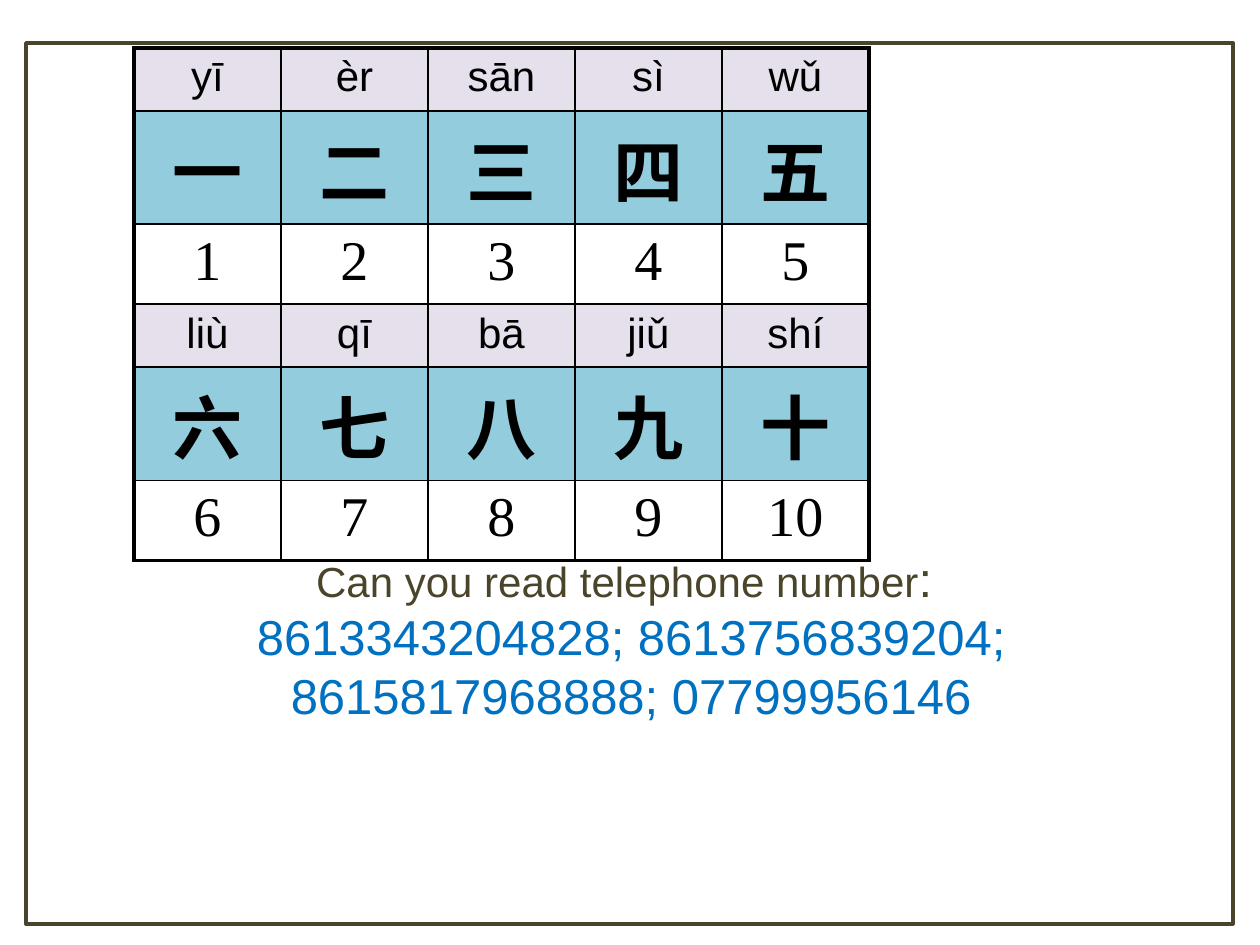
from lxml.etree import SubElement
from pptx import Presentation
from pptx.dml.color import RGBColor
from pptx.enum.shapes import MSO_SHAPE
from pptx.enum.text import MSO_ANCHOR, PP_ALIGN
from pptx.oxml.ns import qn
from pptx.util import Emu, Pt

BLACK = RGBColor(0x00, 0x00, 0x00)
OLIVE = RGBColor(0x4A, 0x45, 0x2A)
BLUE = RGBColor(0x00, 0x70, 0xC0)
LILAC = RGBColor(0xE6, 0xE0, 0xEC)
AQUA = RGBColor(0x93, 0xCD, 0xDD)

NUMBERS = [
    ["yī", "èr", "sān", "sì", "wǔ"],
    ["一", "二", "三", "四", "五"],
    ["1", "2", "3", "4", "5"],
    ["liù", "qī", "bā", "jiǔ", "shí"],
    ["六", "七", "八", "九", "十"],
    ["6", "7", "8", "9", "10"],
]
ROW_STYLES = [
    (63, LILAC, {"name": "Arial", "size": Pt(24), "bold": False}),
    (97, AQUA, {"name": "Noto Sans CJK SC", "size": Pt(40), "bold": True}),
    (80, None, {"name": "Times New Roman", "size": Pt(32), "bold": False}),
]
QUESTION = [
    [("Can you read telephone number", 24, OLIVE), (": ", 28, OLIVE)],
    [("8613343204828; 8613756839204;", 28, BLUE)],
    [("8615817968888; 07799956146", 28, BLUE)],
]


def px(n):
    return Emu(round(n * 914400 / 126))


def add_run(p, text, color, font):
    r = p.add_run()
    r.text = text
    for key, value in font.items():
        setattr(r.font, key, value)
    r.font.color.rgb = color
    SubElement(r.font._element, qn("a:ea"), typeface=font["name"])


def set_borders(cell, widths):
    tc_pr = cell._tc.get_or_add_tcPr()
    for i, (side, width) in enumerate(widths.items()):
        ln = SubElement(tc_pr, qn(f"a:ln{side}"), w=str(Pt(width)))
        fill = SubElement(ln, qn("a:solidFill"))
        SubElement(fill, qn("a:srgbClr"), val=str(BLACK))
        tc_pr.insert(i, ln)


def fill_cell(cell, text, color, font):
    margins = {"margin_left": px(9), "margin_right": px(9),
               "margin_top": px(6), "margin_bottom": px(6)}
    for key, value in margins.items():
        setattr(cell, key, value)
    cell.vertical_anchor = MSO_ANCHOR.TOP
    if color is None:
        cell.fill.background()
    else:
        cell.fill.solid()
        cell.fill.fore_color.rgb = color
    p = cell.text_frame.paragraphs[0]
    p.alignment = PP_ALIGN.CENTER
    add_run(p, text, BLACK, font)


def add_number_table(s, x, y, col_width):
    n_rows, n_cols = len(NUMBERS), len(NUMBERS[0])
    styles = ROW_STYLES * (n_rows // len(ROW_STYLES))
    height = sum(style[0] for style in styles)
    table = s.shapes.add_table(n_rows, n_cols, px(x), px(y),
                               px(col_width * n_cols), px(height)).table
    table.first_row = table.horz_banding = False
    for col in table.columns:
        col.width = px(col_width)
    for i, (row_height, color, font) in enumerate(styles):
        table.rows[i].height = px(row_height)
        for j, text in enumerate(NUMBERS[i]):
            cell = table.cell(i, j)
            fill_cell(cell, text, color, font)
            outer = {"L": j == 0, "R": j == n_cols - 1,
                     "T": i == 0, "B": i == n_rows - 1}
            set_borders(cell, {k: 2.25 if edge else 1 for k, edge in outer.items()})


def add_frame(s, x, y, w, h):
    sp = s.shapes.add_shape(MSO_SHAPE.RECTANGLE, px(x), px(y), px(w), px(h))
    sp.shadow.inherit = False
    sp.fill.background()
    sp.line.color.rgb = OLIVE
    sp.line.width = Pt(2)


def add_question(s, x, y, w, h):
    tf = s.shapes.add_textbox(px(x), px(y), px(w), px(h)).text_frame
    tf.word_wrap = True
    for i, line in enumerate(QUESTION):
        p = tf.add_paragraph() if i else tf.paragraphs[0]
        p.alignment = PP_ALIGN.CENTER
        for text, size, color in line:
            add_run(p, text, color, {"name": "Arial", "size": Pt(size)})


def main():
    prs = Presentation()
    prs.slide_width, prs.slide_height = px(1260), px(945)
    s = prs.slides.add_slide(prs.slide_layouts[6])
    add_number_table(s, 134, 48, 147)
    add_frame(s, 26, 43, 1207, 881)
    add_question(s, 115, 542, 1032, 190)
    prs.save("out.pptx")


if __name__ == "__main__":
    main()
